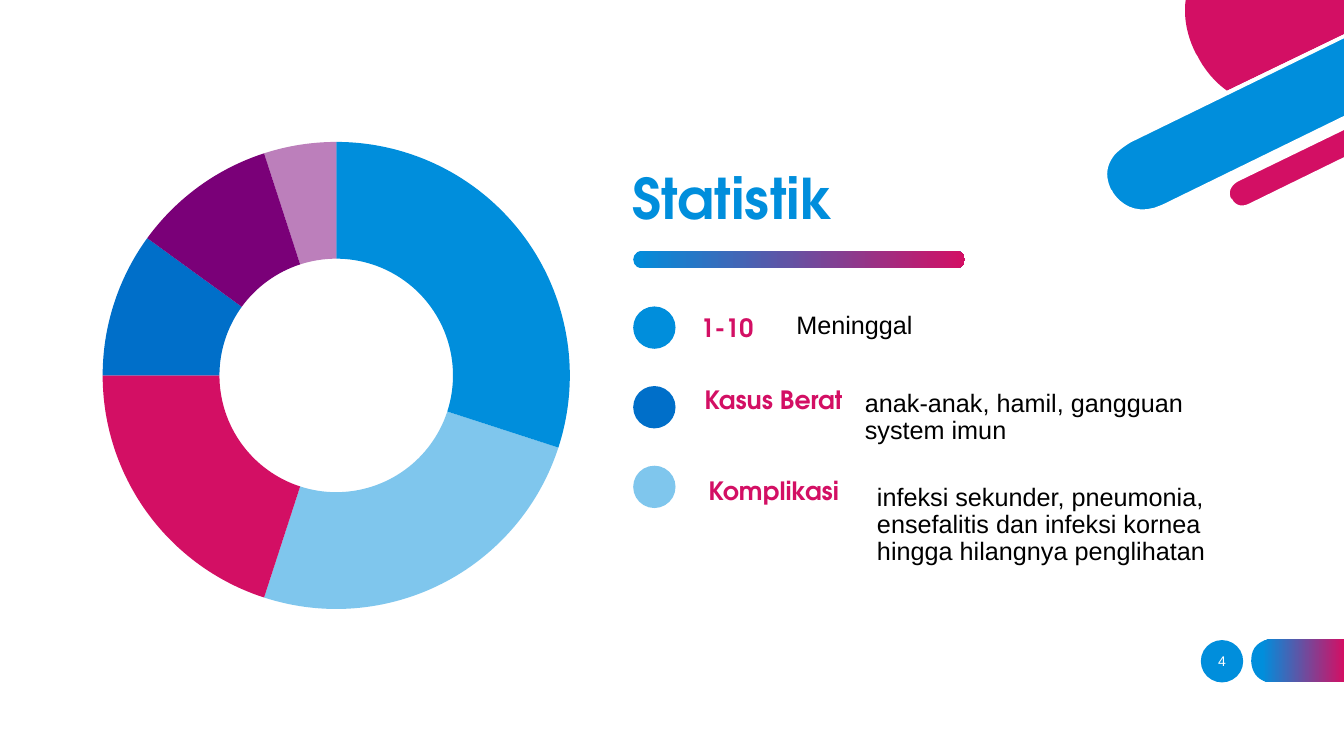
from dataclasses import dataclass

from pptx import Presentation
from pptx.chart.data import CategoryChartData as Data
from pptx.chart.point import Point
from pptx.dml.color import RGBColor as RGB
from pptx.enum.chart import XL_CHART_TYPE as Chart
from pptx.enum.shapes import MSO_SHAPE as Shape
from pptx.enum.text import MSO_ANCHOR as Anchor, PP_ALIGN as Align
from pptx.oxml import parse_xml
from pptx.oxml.ns import nsdecls, qn
from pptx.util import Inches, Pt


@dataclass(frozen=True)
class Theme:
    blue: str = "008EDC"
    deep: str = "006FC9"
    pink: str = "D30F64"
    plum: str = "7A0078"
    white: str = "FFFFFF"
    black: str = "000000"
    head: str = "TeX Gyre Adventor"
    body: str = "Arial"
    big: int = 40
    mid: int = 18
    small: int = 10


def fade(root):
    for tint in root.iter(qn("a:srgbClr")):
        tint.append(parse_xml(f'<a:alpha {nsdecls("a")} val="50000"/>'))


def trace(path):
    spots = [path[0]]
    for step in path[1:]:
        if len(step) == 2:
            spots.append(step)
            continue
        x0, y0 = spots[-1]
        x1, y1, x2, y2, x3, y3 = step
        for n in range(1, 13):
            t = n / 12
            a, b, c, d = (1 - t) ** 3, 3 * t * (1 - t) ** 2, 3 * t * t * (1 - t), t ** 3
            spots.append((a * x0 + b * x1 + c * x2 + d * x3,
                          a * y0 + b * y1 + c * y2 + d * y3))
    return [(Inches(x), Inches(y)) for x, y in spots]


class Deck:
    def __init__(self, theme):
        self.theme = theme
        self.file = Presentation()
        self.file.slide_width, self.file.slide_height = Inches(13.33), Inches(7.5)
        self.slide = self.file.slides.add_slide(self.file.slide_layouts[6])

    def paint(self, shape, color, start=0, pale=False):
        shape.shadow.inherit = False
        shape.line.fill.background()
        if color:
            shape.fill.solid()
            shape.fill.fore_color.rgb = RGB.from_string(color)
        else:
            shape.fill.gradient()
            shape.fill.gradient_angle = 0
            ends = (start, self.theme.blue), (1, self.theme.pink)
            for stop, (spot, tint) in zip(shape.fill.gradient_stops, ends):
                stop.position = spot
                stop.color.rgb = RGB.from_string(tint)
        if pale:
            fade(shape.element.spPr)

    def dot(self, x, y, color, pale=False):
        box = map(Inches, (x, y, 0.42, 0.42))
        self.paint(self.slide.shapes.add_shape(Shape.OVAL, *box), color, pale=pale)

    def bar(self, *box):
        shape = self.slide.shapes.add_shape(Shape.ROUNDED_RECTANGLE, *map(Inches, box))
        shape.adjustments[0] = 0.5
        self.paint(shape, None)

    def free(self, path, color, start=0):
        first, *rest = trace(path)
        pen = self.slide.shapes.build_freeform(*first)
        pen.add_line_segments(rest, close=True)
        self.paint(pen.convert_to_shape(), color, start)

    def text(self, words, box, *, size, color, font, bold=False, anchor=Anchor.TOP,
             align=Align.LEFT, gap=0, line=0.9):
        frame = self.slide.shapes.add_textbox(*map(Inches, box)).text_frame
        frame.word_wrap = True
        frame.vertical_anchor = anchor
        para = frame.paragraphs[0]
        para.alignment, para.line_spacing, para.space_before = align, line, Pt(gap)
        run = para.add_run()
        run.text = words
        run.font.size, run.font.name, run.font.bold = Pt(size), font, bold
        run.font.color.rgb = RGB.from_string(color)

    def ring(self, box, values, tints):
        data = Data()
        data.categories = ["1", "2", "3", "4"]
        data.add_series("Series 1", values)
        chart = self.slide.shapes.add_chart(Chart.DOUGHNUT, *map(Inches, box), data).chart
        chart.has_legend = chart.has_title = False
        chart.font.size, chart.font.name = Pt(self.theme.small), self.theme.body
        chart.font.color.rgb = RGB.from_string(self.theme.black)
        chart.plots[0].vary_by_categories = True
        series = chart.element.find(".//" + qn("c:ser"))
        for spot, (tint, pale) in enumerate(tints):
            look = Point(series, spot).format
            look.fill.solid()
            look.fill.fore_color.rgb = RGB.from_string(tint)
            look.line.fill.background()
            if pale:
                fade(series.findall(qn("c:dPt"))[spot])
        chart.element.find(".//" + qn("c:holeSize")).set("val", "52")
        area = chart.element.find(".//" + qn("c:plotArea"))
        for old in area.findall(qn("c:layout")):
            area.remove(old)
        sides = "".join(f'<c:{key} val="{val}"/>' for key, val in
                        (("x", 0.03), ("y", 0.04), ("w", 0.94), ("h", 0.93)))
        area.insert(0, parse_xml(
            f'<c:layout {nsdecls("c")}><c:manualLayout><c:layoutTarget val="inner"/>'
            f'<c:xMode val="edge"/><c:yMode val="edge"/>{sides}'
            '</c:manualLayout></c:layout>'))


def main():
    look = Theme()
    deck = Deck(look)

    deck.dot(11.91, 6.35, look.blue)
    tab = [(12.62, 6.77), (13.33, 6.77), (13.33, 6.34), (12.62, 6.34),
           (12.62, 6.34, 12.41, 6.34, 12.41, 6.55), (12.41, 6.56),
           (12.41, 6.56, 12.41, 6.77, 12.62, 6.77)]
    deck.free(tab, None, 0.12)

    ribbon = [(11.21, 1.39), (11.21, 1.39, 10.85, 1.57, 11.01, 1.89), (11.01, 1.9),
              (11.01, 1.9, 11.17, 2.22, 11.54, 2.04), (13.33, 1.17), (13.33, 0.36)]
    disc = [(11.88, 0.56), (11.88, 0.56, 11.97, 0.76, 12.17, 0.9), (13.33, 0.34),
            (13.33, 0), (11.76, 0), (11.74, 0.15, 11.76, 0.33, 11.86, 0.53)]
    strip = [(13.33, 1.26), (12.27, 1.78), (12.27, 1.78, 12.13, 1.85, 12.2, 1.97),
             (12.2, 1.98), (12.2, 1.98, 12.26, 2.11, 12.4, 2.04), (13.33, 1.58)]
    thin = [(12.39, 2.02), (12.27, 2.08, 12.22, 1.98, 12.22, 1.97), (12.21, 1.97),
            (12.16, 1.86, 12.28, 1.8, 12.28, 1.8), (13.33, 1.29), (13.33, 1.24),
            (12.26, 1.76), (12.26, 1.76, 12.19, 1.8, 12.17, 1.87),
            (12.15, 1.91, 12.16, 1.95, 12.18, 1.99),
            (12.2, 2.03, 12.25, 2.08, 12.32, 2.08),
            (12.35, 2.08, 12.38, 2.08, 12.41, 2.06), (13.33, 1.61), (13.33, 1.56)]
    wide = [(11.53, 2.03), (11.19, 2.19, 11.03, 1.9, 11.03, 1.89), (11.02, 1.88),
            (10.96, 1.75, 10.97, 1.64, 11.06, 1.53),
            (11.13, 1.46, 11.22, 1.41, 11.22, 1.41), (13.33, 0.38), (13.33, 0.34),
            (11.2, 1.37), (11.19, 1.38, 11.02, 1.46, 10.96, 1.63),
            (10.93, 1.71, 10.94, 1.8, 10.99, 1.9), (10.99, 1.91),
            (10.99, 1.91, 11.1, 2.12, 11.33, 2.12),
            (11.39, 2.12, 11.46, 2.1, 11.54, 2.06), (13.33, 1.19), (13.33, 1.15)]
    for path, color in ((ribbon, look.blue), (disc, look.pink), (strip, look.pink),
                        (thin, look.white), (wide, look.white)):
        deck.free(path, color)

    deck.bar(6.28, 2.49, 3.29, 0.17)
    deck.ring((0.87, 1.19, 4.93, 5.02), (30, 25, 20, 10, 10, 5),
              ((look.blue, False), (look.blue, True), (look.pink, False),
               (look.deep, False), (look.plum, False), (look.plum, True)))
    deck.text("Statistik", (6.17, 1.61, 4.81, 0.74), size=look.big, color=look.blue,
              font=look.head, bold=True, anchor=Anchor.BOTTOM)

    rows = (
        (3.04, look.blue, False, "1-10", (6.85, 3.05),
         "Meninggal", (7.8, 3.05, 1.75, 0.4)),
        (3.83, look.deep, False, "Kasus Berat", (6.89, 3.77),
         "anak-anak, hamil, gangguan system imun", (8.48, 3.83, 3.98, 0.74)),
        (4.62, look.blue, True, "Komplikasi", (6.93, 4.67),
         "infeksi sekunder, pneumonia, ensefalitis dan infeksi kornea "
         "hingga hilangnya penglihatan", (8.6, 4.76, 3.63, 1.12)),
    )
    for top, tint, pale, label, spot, note, box in rows:
        deck.dot(6.28, top, tint, pale)
        deck.text(label, (*spot, 1.75, 0.4), size=look.mid, color=look.pink,
                  font=look.head, bold=True, anchor=Anchor.BOTTOM, gap=10)
        deck.text(note, box, size=look.mid, color=look.black, font=look.body, gap=6)

    deck.text("4", (11.82, 6.36, 0.6, 0.4), size=look.small, color=look.white,
              font=look.body, anchor=Anchor.MIDDLE, align=Align.CENTER, line=1.0)
    deck.file.save("out.pptx")


if __name__ == "__main__":
    main()
